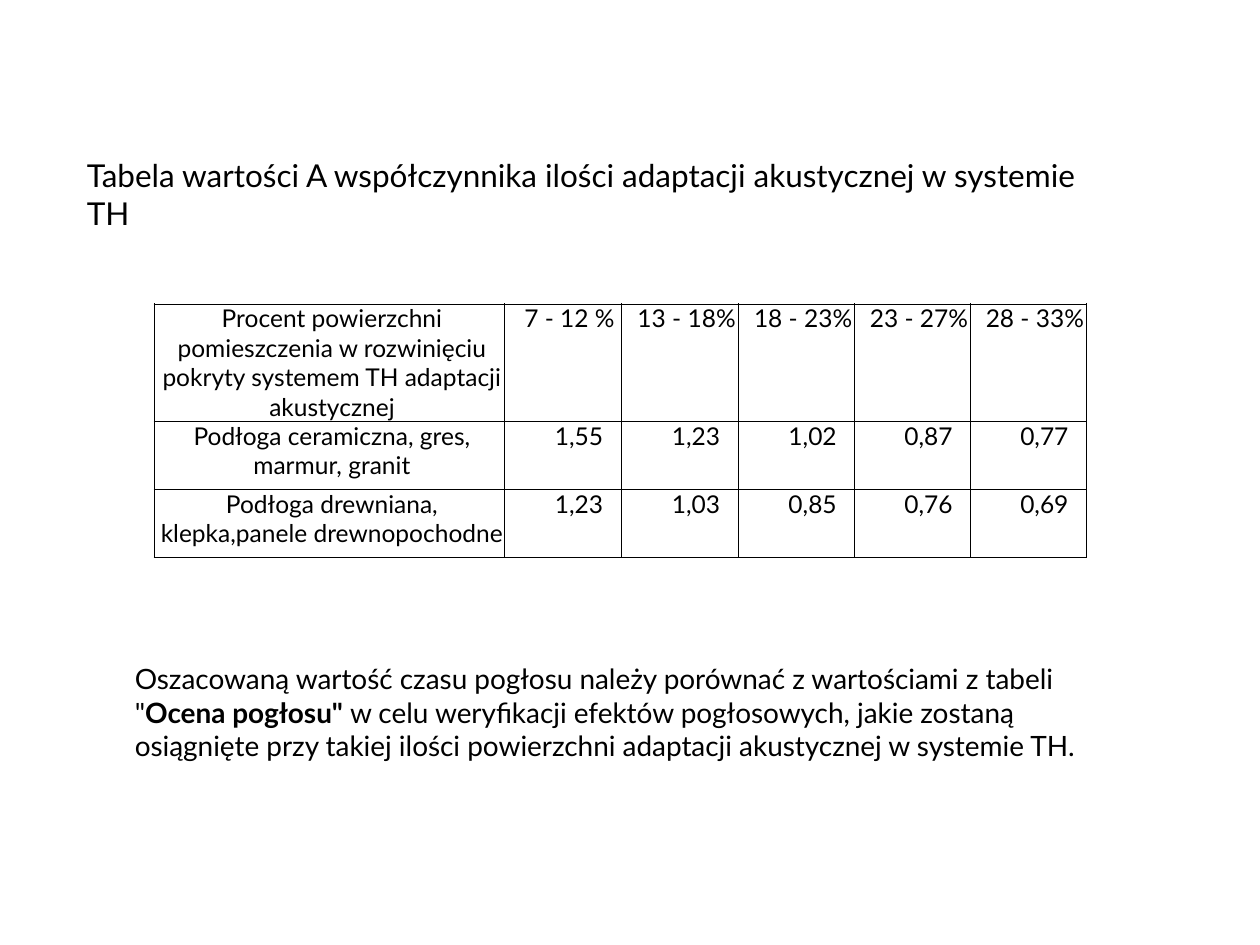
from dataclasses import dataclass

from lxml import etree
from pptx import Presentation
from pptx import util as u
from pptx.dml.color import RGBColor
from pptx.enum import text
from pptx.oxml.ns import qn

BLACK = "000000"
FONT = "Lato"


@dataclass
class Span:
    words: str
    bold: bool = False


@dataclass
class TextBlock:
    left: float
    top: float
    width: float
    height: float
    size: int
    insets: dict[str, float]
    spans: list[Span]


@dataclass
class Row:
    height: float
    value_indent: float
    cells: list[str]


# Content
TITLE = TextBlock(
    0.59, 0.99, 8.35, 0.9, 18,
    {"left": 0.1, "top": 0.25, "right": 0.1, "bottom": 0.05},
    [Span("Tabela wartości A współczynnika ilości adaptacji akustycznej w systemie TH")],
)
ADVICE = TextBlock(
    1.06, 5.25, 7.72, 1.26, 16,
    {"left": 0.01, "top": 0, "right": 0, "bottom": 0},
    [
        Span('Oszacowaną wartość czasu pogłosu należy porównać z wartościami z tabeli "'),
        Span('Ocena pogłosu" ', bold=True),
        Span("w celu weryfikacji efektów pogłosowych, jakie zostaną osiągnięte przy "
             "takiej ilości powierzchni adaptacji akustycznej w systemie TH."),
    ],
)
COLUMN_WIDTHS = [2.78] + [0.93] * 2 + [0.92] * 3
LABEL_INDENT = 0.05
ROWS = [
    Row(0.81, 0.11, [
        "Procent powierzchni pomieszczenia w rozwinięciu pokryty systemem TH adaptacji akustycznej",
        "7 - 12 %", "13 - 18%", "18 - 23%", "23 - 27%", "28 - 33%"]),
    Row(0.54, 0.26, ["Podłoga ceramiczna, gres, marmur, granit",
                     "1,55", "1,23", "1,02", "0,87", "0,77"]),
    Row(0.54, 0.26, ["Podłoga drewniana, klepka,panele drewnopochodne",
                     "1,23", "1,03", "0,85", "0,76", "0,69"]),
]


def color(value: str) -> RGBColor:
    return RGBColor.from_string(value)


def add_span(para, span: Span, size: int) -> None:
    run = para.add_run()
    run.text = span.words
    formats = {"name": FONT, "size": u.Pt(size), "bold": span.bold}
    for name, value in formats.items():
        setattr(run.font, name, value)
    run.font.color.rgb = color(BLACK)


def set_margins(target, insets: dict[str, float]) -> None:
    for side, inset in insets.items():
        setattr(target, f"margin_{side}", u.Inches(inset))


def add_text(page, block: TextBlock) -> None:
    box = page.shapes.add_textbox(
        *map(u.Inches, (block.left, block.top, block.width, block.height)))
    frame = box.text_frame
    frame.word_wrap = True
    set_margins(frame, block.insets)
    for span in block.spans:
        add_span(frame.paragraphs[0], span, block.size)


def add_borders(cell, width: float) -> None:
    properties = cell._tc.get_or_add_tcPr()
    for position, side in enumerate(("lnL", "lnR", "lnT", "lnB")):
        line = etree.Element(qn(f"a:{side}"), w=str(u.Pt(width)))
        fill = etree.SubElement(line, qn("a:solidFill"))
        etree.SubElement(fill, qn("a:srgbClr"), val=BLACK)
        properties.insert(position, line)


def fill_cell(cell, words: str, indent: float) -> None:
    set_margins(cell, dict.fromkeys(("left", "top", "right", "bottom"), 0))
    cell.fill.background()
    add_borders(cell, 0.2)
    para = cell.text_frame.paragraphs[0]
    para.alignment = text.PP_ALIGN.CENTER
    para._p.get_or_add_pPr().set("marL", str(u.Inches(indent)))
    add_span(para, Span(words), 14)


def add_values_table(page, left: float, top: float) -> None:
    height = sum(row.height for row in ROWS)
    table = page.shapes.add_table(
        len(ROWS), len(COLUMN_WIDTHS),
        *map(u.Inches, (left, top, sum(COLUMN_WIDTHS), height))).table
    table.first_row = table.horz_banding = False
    for column, width in zip(table.columns, COLUMN_WIDTHS):
        column.width = u.Inches(width)
    for table_row, row in zip(table.rows, ROWS):
        table_row.height = u.Inches(row.height)
        for index, words in enumerate(row.cells):
            indent = row.value_indent if index else LABEL_INDENT
            fill_cell(table_row.cells[index], words, indent)


def main() -> None:
    deck = Presentation()
    deck.slide_width, deck.slide_height = u.Inches(10), u.Inches(7.5)
    page = deck.slides.add_slide(deck.slide_layouts[6])

    # Coefficient table, then the heading above and the advice below it
    add_values_table(page, 1.22, 2.41)
    add_text(page, TITLE)
    add_text(page, ADVICE)

    deck.save("out.pptx")


if __name__ == "__main__":
    main()
